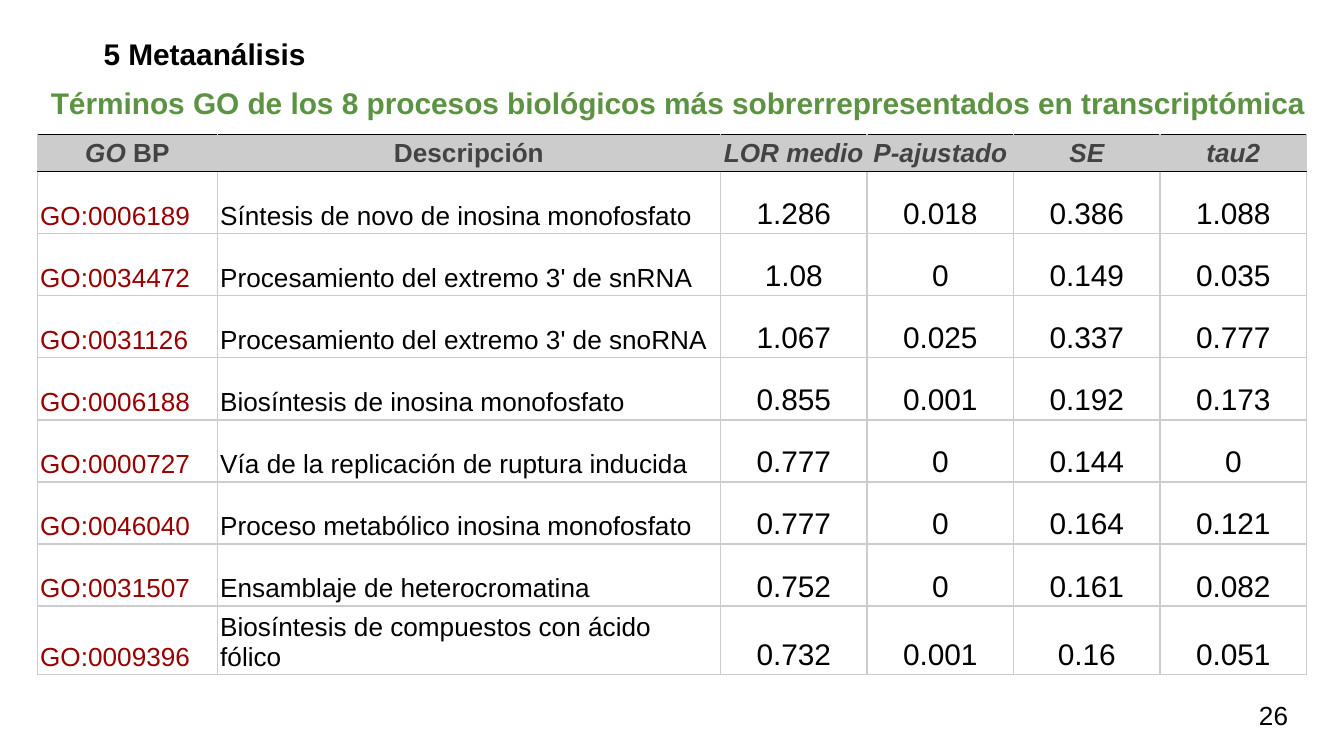
from lxml import etree
from pptx import Presentation
from pptx.dml.color import RGBColor
from pptx.enum.text import MSO_ANCHOR, PP_ALIGN
from pptx.oxml.ns import qn
from pptx.util import Pt

LEFT, CENTER, JUSTIFY = PP_ALIGN.LEFT, PP_ALIGN.CENTER, PP_ALIGN.JUSTIFY
TOP, MIDDLE, BOTTOM = MSO_ANCHOR.TOP, MSO_ANCHOR.MIDDLE, MSO_ANCHOR.BOTTOM

BLACK, GRAY, DARK_GRAY = "000000", "CCCCCC", "434343"
GREEN, RED = "5C9343", "980000"

COLUMN_WIDTHS = [96.5, 269.5] + [78.5] * 4
HEADER_HEIGHT, ROW_HEIGHT = 17.3, 33.3
CELL_MARGIN = 1.5

BOLD = {"size": Pt(14), "bold": True, "italic": False}
BOLD_ITALIC = {**BOLD, "italic": True}
HEADER = [
    [("GO ", BOLD_ITALIC), ("BP", BOLD)],
    [("Descripción", BOLD)],
    [("LOR medio", BOLD_ITALIC)],
    [("P-ajustado", BOLD_ITALIC)],
    [("SE", BOLD_ITALIC)],
    [("tau2", BOLD_ITALIC)],
]
GO_TERMS = [
    ("GO:0006189", "Síntesis de novo de inosina monofosfato", "1.286", "0.018", "0.386", "1.088"),
    ("GO:0034472", "Procesamiento del extremo 3' de snRNA", "1.08", "0", "0.149", "0.035"),
    ("GO:0031126", "Procesamiento del extremo 3' de snoRNA", "1.067", "0.025", "0.337", "0.777"),
    ("GO:0006188", "Biosíntesis de inosina monofosfato", "0.855", "0.001", "0.192", "0.173"),
    ("GO:0000727", "Vía de la replicación de ruptura inducida", "0.777", "0", "0.144", "0"),
    ("GO:0046040", "Proceso metabólico inosina monofosfato", "0.777", "0", "0.164", "0.121"),
    ("GO:0031507", "Ensamblaje de heterocromatina", "0.752", "0", "0.161", "0.082"),
    ("GO:0009396", "Biosíntesis de compuestos con ácido fólico", "0.732", "0.001", "0.16", "0.051"),
]


def color(hex_value):
    return RGBColor.from_string(hex_value)


def set_attributes(target, values):
    for name, value in values.items():
        setattr(target, name, value)


def add_run(paragraph, text, hex_value, font_values):
    run = paragraph.add_run()
    run.text = text
    set_attributes(run.font, {"name": "Arial", **font_values})
    run.font.color.rgb = color(hex_value)


def add_text(slide, box, text, hex_value, font_values, alignment=LEFT, anchor=TOP):
    shape = slide.shapes.add_textbox(*(Pt(length) for length in box))
    frame = shape.text_frame
    set_attributes(frame, {"word_wrap": True, "vertical_anchor": anchor})
    paragraph = frame.paragraphs[0]
    paragraph.alignment = alignment
    add_run(paragraph, text, hex_value, font_values)
    return paragraph


def set_borders(cell, top, bottom):
    properties = cell._tc.get_or_add_tcPr()
    sides = {"a:lnL": GRAY, "a:lnR": GRAY, "a:lnT": top, "a:lnB": bottom}
    for tag, hex_value in sides.items():
        line = etree.SubElement(properties, qn(tag), w=str(Pt(1)))
        fill = etree.SubElement(line, qn("a:solidFill"))
        etree.SubElement(fill, qn("a:srgbClr"), val=hex_value)


def format_cell(cell, runs, hex_value, alignment):
    margins = {f"margin_{side}": Pt(CELL_MARGIN) for side in ("left", "right", "top", "bottom")}
    set_attributes(cell, {"vertical_anchor": BOTTOM, **margins})
    paragraph = cell.text_frame.paragraphs[0]
    paragraph.alignment = alignment
    for text, font_values in runs:
        add_run(paragraph, text, hex_value, font_values)


def fill_header(table):
    for column, runs in enumerate(HEADER):
        cell = table.cell(0, column)
        format_cell(cell, runs, DARK_GRAY, CENTER)
        set_borders(cell, BLACK, BLACK)
        cell.fill.solid()
        cell.fill.fore_color.rgb = color(GRAY)


def fill_body(table):
    for row, term in enumerate(GO_TERMS, start=1):
        for column, text in enumerate(term):
            cell = table.cell(row, column)
            is_number = column > 1
            font_values = {"size": Pt(16 if is_number else 14), "bold": False}
            hex_value = RED if column == 0 else BLACK
            format_cell(cell, [(text, font_values)], hex_value, CENTER if is_number else LEFT)
            set_borders(cell, BLACK if row == 1 else GRAY, GRAY)
            cell.fill.background()


def add_go_table(slide, left, top):
    heights = [HEADER_HEIGHT] + [ROW_HEIGHT] * len(GO_TERMS)
    table = slide.shapes.add_table(
        len(heights), len(COLUMN_WIDTHS),
        Pt(left), Pt(top), Pt(sum(COLUMN_WIDTHS)), Pt(sum(heights)),
    ).table
    set_attributes(table, {"first_row": False, "horz_banding": False})
    for column, width in zip(table.columns, COLUMN_WIDTHS):
        column.width = Pt(width)
    for row, height in zip(table.rows, heights):
        row.height = Pt(height)
    fill_header(table)
    fill_body(table)


def main():
    presentation = Presentation()
    set_attributes(presentation, {"slide_width": Pt(720), "slide_height": Pt(405)})
    slide = presentation.slides.add_slide(presentation.slide_layouts[6])

    title_font = {"size": Pt(16), "bold": True}
    add_text(slide, (14.4, 42, 698, 26.6),
             "Términos GO de los 8 procesos biológicos más sobrerrepresentados en transcriptómica",
             GREEN, title_font, CENTER)
    add_go_table(slide, 20, 72)
    section = add_text(slide, (20, 15.4, 463, 26.6), "5 Metaanálisis", BLACK, title_font, JUSTIFY)
    section.space_before = Pt(10)
    section._p.get_or_add_pPr().set("marL", str(Pt(28.4)))
    add_text(slide, (667.4, 367.5, 43.2, 31), "26", BLACK, {"size": Pt(14)}, anchor=MIDDLE)

    presentation.save("out.pptx")


if __name__ == "__main__":
    main()
